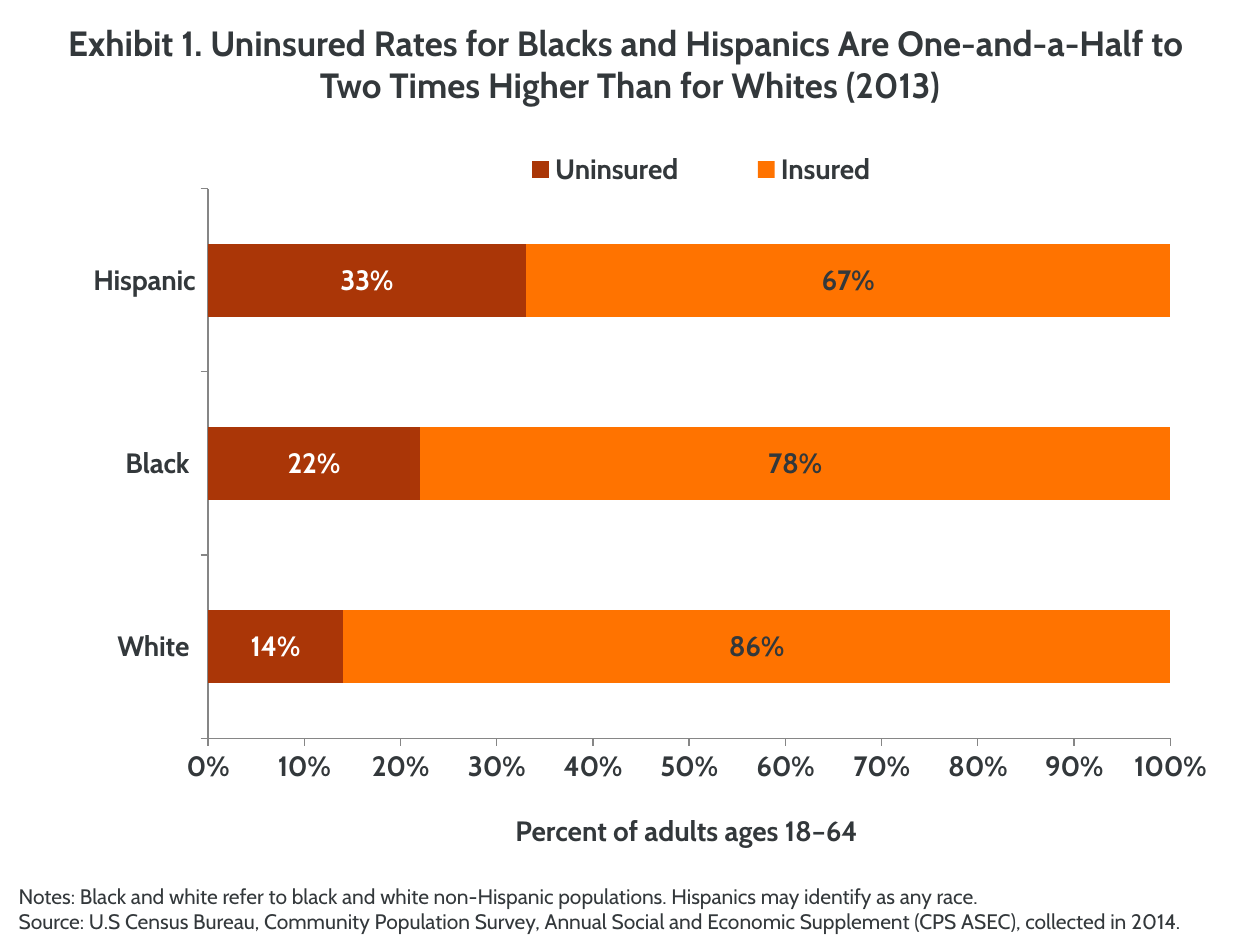
from lxml.etree import SubElement
from pptx import Presentation
from pptx.chart.data import CategoryChartData
from pptx.dml.color import RGBColor
from pptx.enum.chart import XL_CHART_TYPE, XL_LEGEND_POSITION, XL_TICK_MARK
from pptx.enum.text import MSO_ANCHOR, PP_ALIGN
from pptx.oxml.ns import qn
from pptx.util import Inches, Pt

FONT = "Cabin"
DARK = RGBColor(0x33, 0x38, 0x3B)
WHITE = RGBColor(0xFF, 0xFF, 0xFF)
GRAY = RGBColor(0x86, 0x86, 0x86)
RUST = RGBColor(0xAA, 0x36, 0x07)
ORANGE = RGBColor(0xFF, 0x73, 0x00)


def write_lines(shape, lines, size, bold, alignment):
    """Fill a shape with one paragraph per line."""
    frame = shape.text_frame
    frame.word_wrap = True
    for index, line in enumerate(lines):
        paragraph = frame.add_paragraph() if index else frame.paragraphs[0]
        paragraph.alignment = alignment
        for part_index, part in enumerate(line.split("\n")):
            if part_index:
                paragraph.add_line_break()
            run = paragraph.add_run()
            run.text = part
            run.font.name, run.font.size, run.font.bold = FONT, Pt(size), bold
            run.font.color.rgb = DARK


def set_layout(parent, following, x, y, width, height, inner=False):
    """Place a chart part by fractions of the chart's size."""
    for old in parent.findall(qn("c:layout")):
        parent.remove(old)
    layout = SubElement(parent, qn("c:layout"))
    following.addprevious(layout)
    manual = SubElement(layout, qn("c:manualLayout"))
    settings = [("xMode", "edge"), ("yMode", "edge"),
                ("x", x), ("y", y), ("w", width), ("h", height)]
    if inner:
        settings.insert(0, ("layoutTarget", "inner"))
    for name, value in settings:
        SubElement(manual, qn(f"c:{name}")).set("val", str(value))


presentation = Presentation()
presentation.slide_width, presentation.slide_height = Inches(10), Inches(7.5)
slide = presentation.slides.add_slide(presentation.slide_layouts[5])

# Title
title = slide.shapes.title
title.left, title.top = Inches(0), Inches(0.1)
title.width, title.height = Inches(10), Inches(0.8)
title.text_frame.vertical_anchor = MSO_ANCHOR.MIDDLE
write_lines(title, ["Exhibit 1. Uninsured Rates for Blacks and Hispanics Are One-and-a-Half to \n"
                    "Two Times Higher Than for Whites (2013)"], 20, True, PP_ALIGN.CENTER)

# Insurance chart
data = CategoryChartData(number_format="0%")
data.categories = ["White ", "Black ", "Hispanic"]
data.add_series("Uninsured", [0.14, 0.22, 0.33])
data.add_series("Insured", [0.86, 0.78, 0.67])
chart = slide.shapes.add_chart(XL_CHART_TYPE.BAR_STACKED_100, Inches(0.15), Inches(0.9),
                               Inches(9.5), Inches(5.58), data).chart
chart.has_title = False
chart.font.name, chart.font.size, chart.font.bold = FONT, Pt(16), True
chart.font.color.rgb = DARK

# Bars and their labels
plot = chart.plots[0]
plot.gap_width, plot.overlap = 150, 100
plot.vary_by_categories = False
for series, fill, label_color in zip(plot.series, [RUST, ORANGE], [WHITE, DARK]):
    series.format.fill.solid()
    series.format.fill.fore_color.rgb = fill
    labels = series.data_labels
    labels.show_value = True
    labels.number_format, labels.number_format_is_linked = "0%", False
    labels.font.name, labels.font.size, labels.font.bold = FONT, Pt(16), True
    labels.font.color.rgb = label_color

# Axes
for axis in (chart.category_axis, chart.value_axis):
    axis.has_major_gridlines = False
    axis.major_tick_mark = XL_TICK_MARK.OUTSIDE
    axis.minor_tick_mark = XL_TICK_MARK.NONE
    axis.format.line.color.rgb = GRAY
    axis.format.line.width = Pt(0.75)
value_axis = chart.value_axis
value_axis.minimum_scale, value_axis.maximum_scale, value_axis.major_unit = 0, 1, 0.1
value_axis.tick_labels.number_format = "0%"
value_axis.tick_labels.number_format_is_linked = False

# Legend and plot placement
chart.has_legend = True
legend = chart.legend
legend.position = XL_LEGEND_POSITION.TOP
legend.include_in_layout = False
legend_element = legend._element
set_layout(legend_element, legend_element.find(qn("c:overlay")), 0.37, 0.05, 0.4, 0.06)
plot_area = chart._chartSpace.chart.plotArea
set_layout(plot_area, plot_area.find(qn("c:barChart")), 0.158, 0.107, 0.804, 0.782, inner=True)

# Notes and axis caption
notes = slide.shapes.add_textbox(Inches(0.05), Inches(6.96), Inches(9.87), Inches(0.5))
write_lines(notes, [
    "Notes: Black and white refer to black and white non-Hispanic populations. "
    "Hispanics may identify as any race.",
    "Source: U.S Census Bureau, Community Population Survey, Annual Social and "
    "Economic Supplement (CPS ASEC), collected in 2014."], 12, False, PP_ALIGN.LEFT)
caption = slide.shapes.add_textbox(Inches(3.97), Inches(6.41), Inches(2.96), Inches(0.37))
write_lines(caption, ["Percent of adults ages 18–64"], 16, True, PP_ALIGN.CENTER)

presentation.save("out.pptx")
